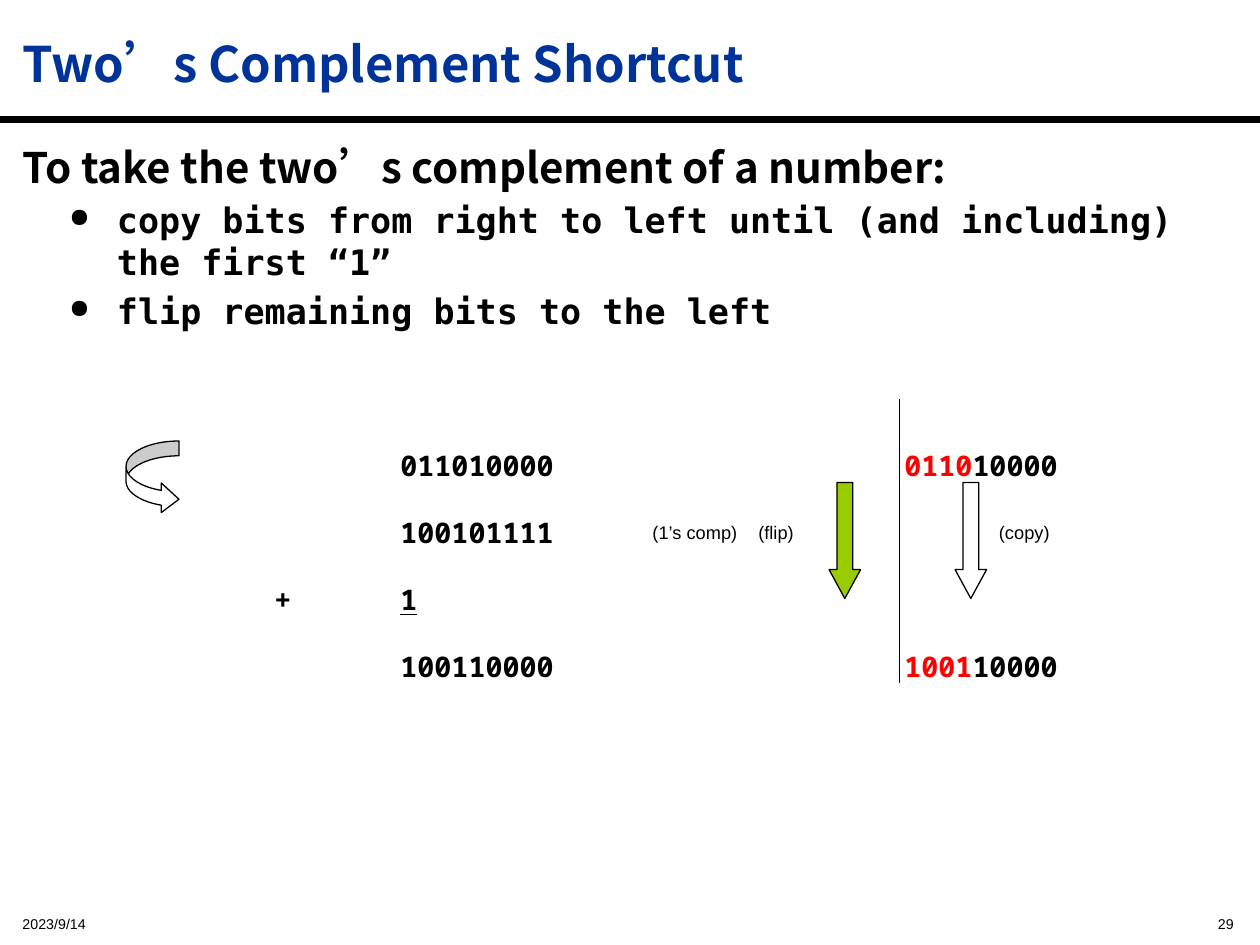
from dataclasses import dataclass

from lxml.etree import SubElement
from pptx import Presentation
from pptx.dml.color import RGBColor
from pptx.enum.shapes import MSO_CONNECTOR, MSO_SHAPE
from pptx.enum.text import MSO_ANCHOR, PP_ALIGN
from pptx.oxml.ns import qn
from pptx.util import Inches, Pt

WIDTH, HEIGHT = 10, 7.5


@dataclass(frozen=True)
class Theme:
    """Colours, fonts and run formats of the slide."""
    ink: str = "000000"
    title_blue: str = "003399"
    flipped: str = "FF0000"
    flip_arrow: str = "99CC00"
    paper: str = "FFFFFF"
    sans: str = "Noto Sans CJK SC"
    code: str = "DejaVu Sans Mono"
    bits: str = "Noto Sans Mono"
    plain: str = "Arial"

    def formats(self):
        """Return the run format of each text role."""
        bit = dict(name=self.bits, size=Pt(28), bold=True)
        return {
            "title": dict(name=self.sans, size=Pt(28), bold=True, color=self.title_blue),
            "lead": dict(name=self.sans, size=Pt(24), bold=True),
            "step": dict(name=self.code, size=Pt(20), bold=True),
            "bit": dict(bit, lowered=True),
            "flipped": dict(bit, lowered=True, color=self.flipped),
            "carry": dict(bit, lowered=True, underline=True),
            "label": dict(name=self.plain, size=Pt(18), bold=False, lowered=True),
            "footer": dict(name=self.plain, size=Pt(14), bold=False, lowered=True),
        }


THEME = Theme()
FORMATS = THEME.formats()


def inches(box):
    """Convert a box of inch values to lengths."""
    return [Inches(value) for value in box]


def add_run(paragraph, wording, role):
    """Append one run in the format of its role."""
    run = paragraph.add_run()
    run.text = wording
    style = dict(FORMATS[role])
    run.font.color.rgb = RGBColor.from_string(style.pop("color", THEME.ink))
    properties = run.font._element
    if style.pop("lowered", False):
        properties.set("baseline", "-25000")
    for attribute, value in style.items():
        setattr(run.font, attribute, value)
    SubElement(properties, qn("a:ea"), typeface=style["name"])


def add_frame(slide, box, anchor=MSO_ANCHOR.TOP):
    """Add a wrapping text box and return its frame."""
    frame = slide.shapes.add_textbox(*inches(box)).text_frame
    frame.word_wrap = True
    frame.vertical_anchor = anchor
    return frame


def add_label(slide, box, wording, role="label", align=PP_ALIGN.LEFT, anchor=MSO_ANCHOR.TOP):
    """Place a single line of text."""
    paragraph = add_frame(slide, box, anchor).paragraphs[0]
    paragraph.alignment = align
    add_run(paragraph, wording, role)


def add_rule(slide, start, end, weight):
    """Draw a straight rule without a shadow."""
    rule = slide.shapes.add_connector(MSO_CONNECTOR.STRAIGHT, *inches(start + end))
    rule.line.color.rgb = RGBColor.from_string(THEME.ink)
    rule.line.width = Pt(weight)
    SubElement(rule._element.spPr, qn("a:effectLst"))


def add_arrow(slide, kind, box, fill, adjustments):
    """Draw an outlined block arrow."""
    arrow = slide.shapes.add_shape(kind, *inches(box))
    arrow.shadow.inherit = False
    arrow.fill.solid()
    arrow.fill.fore_color.rgb = RGBColor.from_string(fill)
    arrow.line.color.rgb = RGBColor.from_string(THEME.ink)
    arrow.line.width = Pt(0.75)
    for index, value in enumerate(adjustments):
        arrow.adjustments[index] = value


def build_heading(slide, box):
    """Fill the title placeholder and rule it off."""
    left, top, width, height = box
    title = slide.shapes.title
    title.left, title.top, title.width, title.height = inches(box)
    title.text_frame.vertical_anchor = MSO_ANCHOR.MIDDLE
    paragraph = title.text_frame.paragraphs[0]
    paragraph.alignment = PP_ALIGN.LEFT
    add_run(paragraph, "Two’s Complement Shortcut", "title")
    rule_y = top + height + 0.03
    add_rule(slide, (0, rule_y), (WIDTH, rule_y), 3.75)


def build_steps(slide, box):
    """Write the lead sentence and its bulleted steps."""
    frame = add_frame(slide, box)
    lead = frame.paragraphs[0]
    lead.space_before = Pt(4.8)
    add_run(lead, "To take the two’s complement of a number:", "lead")
    for step in ("copy bits from right to left until (and including) the first “1”",
                 "flip remaining bits to the left"):
        paragraph = frame.add_paragraph()
        paragraph.level = 1
        paragraph.space_before = Pt(4)
        properties = paragraph._p.get_or_add_pPr()
        properties.set("marL", str(Inches(0.75)))
        properties.set("indent", str(Inches(-0.38)))
        SubElement(properties, qn("a:buSzPct"), val="75000")
        SubElement(properties, qn("a:buChar"), char="●")
        add_run(paragraph, step, "step")


def build_sums(slide, box):
    """Set both worked examples on one-inch tab columns."""
    rows = (
        (("\t\t011010000\t\t\t", "bit"), ("0110", "flipped"), ("10000", "bit")),
        (("\t\t100101111\t", "bit"), ("(1’s comp)", "label")),
        (("\t+\t", "bit"), ("1", "carry")),
        (("\t\t100110000\t\t\t", "bit"), ("1001", "flipped"), ("10000", "bit")),
    )
    frame = add_frame(slide, box)
    for index, row in enumerate(rows):
        paragraph = frame.add_paragraph() if index else frame.paragraphs[0]
        tabs = SubElement(paragraph._p.get_or_add_pPr(), qn("a:tabLst"))
        for column in range(1, 7):
            SubElement(tabs, qn("a:tab"), pos=str(Inches(column)), algn="l")
        for wording, role in row:
            add_run(paragraph, wording, role)


def build_marks(slide, box):
    """Draw the arrows, their labels and the divider over the sums."""
    left, top, width, height = box
    add_arrow(slide, MSO_SHAPE.CURVED_RIGHT_ARROW, (left, top + 0.33, 0.42, 0.58),
              THEME.paper, (0.28, 0.56, 0.333))
    for arrow_x, fill, label_x, label_width, wording in (
            (6.58, THEME.flip_arrow, 5.92, 0.69, "(flip)"),
            (7.58, THEME.paper, 7.83, 0.9, "(copy)")):
        add_arrow(slide, MSO_SHAPE.DOWN_ARROW, (arrow_x, top + 0.66, 0.25, 0.92),
                  fill, (0.5, 0.917))
        add_label(slide, (label_x, top + 0.75, label_width, 0.4), wording)
    divider_x = left + width
    add_rule(slide, (divider_x, top), (divider_x, top + height), 0.75)


def build_footer(slide, box):
    """Put the date at the left and the page number at the right."""
    left, top, width, height = box
    add_label(slide, (left, top, 2.5, height), "2023/9/14", "footer",
              anchor=MSO_ANCHOR.MIDDLE)
    add_label(slide, (left + width - 3, top, 3, height), "29", "footer",
              PP_ALIGN.RIGHT, MSO_ANCHOR.MIDDLE)


def main():
    """Build and save the slide."""
    deck = Presentation()
    deck.slide_width, deck.slide_height = inches((WIDTH, HEIGHT))
    slide = deck.slides.add_slide(deck.slide_layouts[5])
    margin = 0.08
    build_heading(slide, (margin, margin, WIDTH - margin, 0.84))
    build_steps(slide, (margin, 1.07, WIDTH - margin, 5.99))
    build_sums(slide, (1.08, 3.25, 8.75, 1.97))
    build_marks(slide, (1, 3.17, 6.14, 2.25))
    build_footer(slide, (margin, 7.13, 9.81, 0.27))
    deck.save("out.pptx")


if __name__ == "__main__":
    main()
